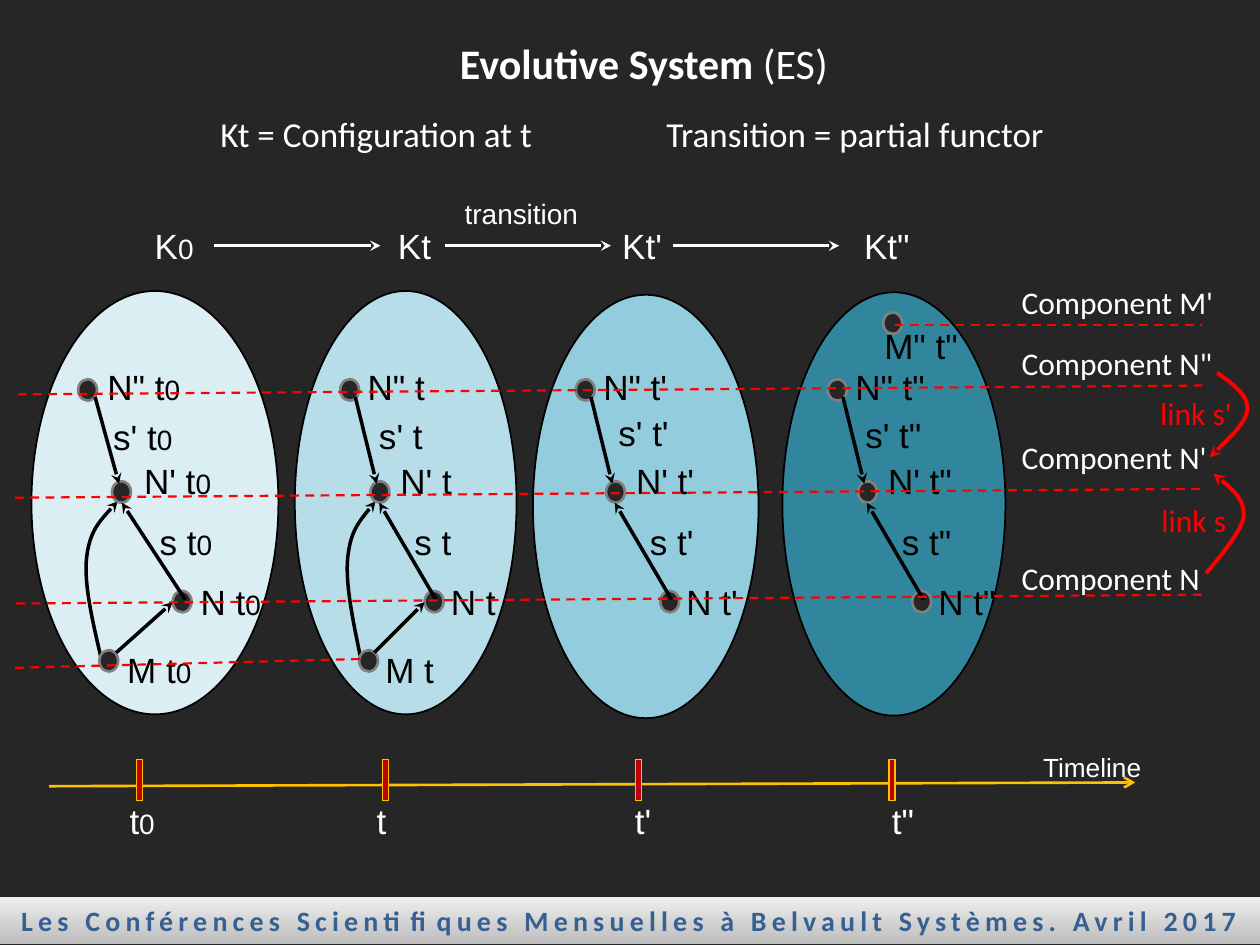
import pptx
import pptx.util
import pptx.dml.color
import pptx.enum.dml
import pptx.enum.shapes
import pptx.enum.text
import pptx.oxml

SHAPE = pptx.enum.shapes.MSO_SHAPE
ALIGN = pptx.enum.text.PP_ALIGN
WHITE, BLACK, RED, DARK, GOLD = "FFFFFF", "000000", "FF0000", "262626", "FFC000"

TITLE = [("Evolutive System ", True), ("(ES)", False)]
SUBTITLES = [(1.65, "Kt = Configuration at t"), (5.19, "Transition = partial functor")]
FOOTER = "Les Conférences Scientifiques Mensuelles à Belvault Systèmes. Avril 2017"

# x is the left of node N"; stretch widens the horizontal offsets of a column
CONFIGS = [
    dict(name="K", time="t", sub="0", name_x=1.13, oval=(0.25, 2.31, 1.96), fill="DBEEF4",
         x=0.62, stretch=1.12, link=(0.80, 3.25), mark=0.89, tick=0.93, has_m=True),
    dict(name="Kt", time="t", sub="", name_x=3.06, oval=(2.34, 2.31, 1.76), fill="B7DEE8",
         x=2.70, stretch=1, link=(2.91, 3.24), mark=2.84, tick=2.89, has_m=True),
    dict(name="Kt'", time="t'", sub="", name_x=4.84, oval=(4.23, 2.34, 1.79), fill="93CDDD",
         x=4.57, stretch=1, link=(4.81, 3.22), mark=4.85, tick=4.94, has_m=False),
    dict(name='Kt"', time='t"', sub="", name_x=6.76, oval=(6.21, 2.32, 1.77), fill="31859C",
         x=6.57, stretch=1, link=(6.77, 3.23), mark=6.86, tick=6.98, has_m=False),
]

# Horizontal offsets from a column's x, and heights on the slide
NODES = [(0, 3.01), (0.24, 3.82), (0.67, 4.69)]
LABELS = [("N'", 0.38, 3.60), ('N"', 0.12, 2.85), ("s", 0.49, 4.08), ("N", 0.78, 4.56)]
ARROWS = [((0.12, 3.15), (0.29, 3.84)), ((0.76, 4.76), (0.31, 3.99))]
M_NODE, M_LABEL = (0.15, 5.16), ("M", 0.26, 5.10)
M_ARROW = ((0.27, 5.18), (0.67, 4.78))
M_CURVE = [(0.16, 5.21), (0.10, 4.92), (0.04, 4.63), (0.06, 4.43),
           (0.08, 4.22), (0.18, 4.10), (0.28, 3.98)]

TRANSITION_STARTS = [1.70, 3.53, 5.34]
COMPONENTS = [("M'", 2.20), ('N"', 2.68), ("N'", 3.43), ("N", 4.39)]
TRACES = [((0.14, 3.13), (9.54, 3.06)), ((7.10, 2.58), (9.54, 2.58)),
          ((0.12, 3.95), (9.53, 3.88)), ((0.13, 4.79), (9.54, 4.72)),
          ((0.12, 5.30), (2.87, 5.23))]
LINKS = [
    ("link s", (9.12, 3.93), "headEnd", [(9.63, 3.76), (9.76, 3.86), (9.88, 3.97), (9.87, 4.10),
                                         (9.86, 4.23), (9.57, 4.55), (9.57, 4.55)]),
    ("link s'", (9.11, 3.08), "tailEnd", [(9.66, 2.96), (9.79, 3.05), (9.91, 3.14), (9.90, 3.25),
                                          (9.89, 3.36), (9.60, 3.63), (9.60, 3.63)]),
]

prs = pptx.Presentation()
prs.slide_width, prs.slide_height = pptx.util.Inches(10), pptx.util.Inches(7.5)
s = prs.slides.add_slide(prs.slide_layouts[5])
inch = pptx.util.Inches


def rgb(value):
    return pptx.dml.color.RGBColor.from_string(value)


def xml(tag, inner="", **attrs):
    ns = "http://schemas.openxmlformats.org/drawingml/2006/main"
    text = " ".join(f'{k}="{v}"' for k, v in attrs.items())
    return pptx.oxml.parse_xml(f'<a:{tag} xmlns:a="{ns}" {text}>{inner}</a:{tag}>')


def add_run(p, text, size, color, font, bold=None):
    r = p.add_run()
    r.text = text
    r.font.size, r.font.name, r.font.bold = pptx.util.Pt(size), font, bold
    r.font.color.rgb = rgb(color)
    return r


def label(x, y, text, size=20, color=WHITE, font="Arial", sub="", w=1.0, h=0.44, wrap=True):
    """Add a text box; sub is a smaller ending of the text."""
    tf = s.shapes.add_textbox(inch(x), inch(y), inch(w), inch(h)).text_frame
    tf.word_wrap = wrap
    add_run(tf.paragraphs[0], text, size, color, font)
    if sub:
        add_run(tf.paragraphs[0], sub, 16, color, font)


def shape(kind, x, y, w, h, fill, color, width):
    sp = s.shapes.add_shape(kind, inch(x), inch(y), inch(w), inch(h))
    sp.shadow.inherit = False
    sp.fill.solid()
    sp.fill.fore_color.rgb = rgb(fill)
    sp.line.color.rgb = rgb(color)
    sp.line.width = pptx.util.Pt(width)
    return sp


def stroke(sp, color, width, end=None, head="stealth"):
    sp.line.color.rgb = rgb(color)
    sp.line.width = pptx.util.Pt(width)
    if end:
        sp.line._get_or_add_ln().append(xml(end, type=head))


def line(start, end, color, width, head=None, dash=False):
    cn = s.shapes.add_connector(pptx.enum.shapes.MSO_CONNECTOR.STRAIGHT,
                                *(inch(v) for v in (*start, *end)))
    stroke(cn, color, width)
    if dash:
        cn.line.dash_style = pptx.enum.dml.MSO_LINE.DASH
    if head:
        cn.line._get_or_add_ln().append(xml("tailEnd", type=head))
    cn._element.spPr.append(xml("effectLst"))


def curve(points, color, width, end):
    """Draw a start point followed by triples of Bezier points."""
    pts = [(inch(x), inch(y)) for x, y in points]
    builder = s.shapes.build_freeform(*pts[0])
    builder.add_line_segments(pts[1:], close=False)
    sp = builder.convert_to_shape()
    sp.shadow.inherit = False
    sp.fill.background()
    stroke(sp, color, width, end)
    segments = sp._element.xpath(".//a:lnTo")
    outline = segments[0].getparent()
    for i in range(0, len(segments), 3):
        bezier = xml("cubicBezTo")
        for seg in segments[i:i + 3]:
            bezier.append(seg[0])
            outline.remove(seg)
        outline.append(bezier)


def node(x, y):
    shape(SHAPE.OVAL, x, y, 0.15, 0.17, DARK, "808080", 1.5)


def draw_config(c):
    def at(point):
        return c["x"] + c["stretch"] * point[0], point[1]

    def name(text, x, y):
        label(*at((x, y)), f"{text} {c['time']}", color=BLACK, sub=c["sub"])

    label(c["name_x"], 1.73, c["name"], sub=c["sub"])
    x, y, w = c["oval"]
    shape(SHAPE.OVAL, x, y, w, 3.36, c["fill"], BLACK, 1)
    if c["has_m"]:
        curve([at(p) for p in M_CURVE], BLACK, 2, "tailEnd")
    for item in LABELS + [M_LABEL] * c["has_m"]:
        name(*item)
    label(*c["link"], f"s' {c['time']}", color=BLACK, sub=c["sub"])
    for point in NODES + [M_NODE] * c["has_m"]:
        node(*at(point))
    for start, end in ARROWS + [M_ARROW] * c["has_m"]:
        line(at(start), at(end), BLACK, 2, "stealth")


s.background.fill.solid()
s.background.fill.fore_color.rgb = rgb(DARK)

title = s.shapes.title
title.left, title.top, title.width, title.height = map(inch, (3.55, 0.25, 3.32, 0.5))
tf = title.text_frame
tf.auto_size = pptx.enum.text.MSO_AUTO_SIZE.NONE
tf.vertical_anchor = pptx.enum.text.MSO_ANCHOR.TOP
tf.paragraphs[0].alignment = ALIGN.LEFT
for text, bold in TITLE:
    add_run(tf.paragraphs[0], text, 24, WHITE, "Calibri", bold)
for x, text in SUBTITLES:
    label(x, 0.84, text, font="Calibri", w=3.4)

footer = shape(SHAPE.RECTANGLE, 0, 7.12, 10, 0.37, DARK, DARK, 1)
footer.line.fill.background()
footer.fill.gradient()
footer.fill.gradient_angle = 90
for stop, color in zip(footer.fill.gradient_stops, ("BDBDBD", "EEEEEE")):
    stop.color.rgb = rgb(color)
footer.text_frame.word_wrap = False
p = footer.text_frame.paragraphs[0]
p.alignment = ALIGN.CENTER
r = add_run(p, FOOTER, 16, "376092", "Calibri", True)
r.font._element.set("spc", "300")

label(8.18, 5.91, "Timeline", 15, w=1.55, h=0.35)
line((0.39, 6.24), (9.01, 6.21), GOLD, 1.5, "arrow")
label(3.59, 1.51, "transition", 16, w=1.74, h=0.37)
for x in TRANSITION_STARTS:
    line((x, 1.95), (x + 1.32, 1.95), WHITE, 1.5, "stealth")

for c in CONFIGS:
    shape(SHAPE.MATH_MINUS, c["mark"], 6.09, 0.44, 0.2, "C00000", GOLD, 0.75).rotation = 270
    label(c["tick"], 6.3, c["time"], sub=c["sub"])
    draw_config(c)
node(7.01, 2.48)
label(6.92, 2.53, 'M" t"', color=BLACK)

for text, y in COMPONENTS:
    label(8.01, y, f"Component {text}", 18, font="Calibri", w=1.94, h=0.4)
for start, end in TRACES:
    line(start, end, RED, 1.25, dash=True)
for text, (x, y), end, points in LINKS:
    curve(points, RED, 2.25, end)
    label(x, y, text, 18, RED, "Calibri", w=0.8, h=0.4, wrap=False)

prs.save("out.pptx")
